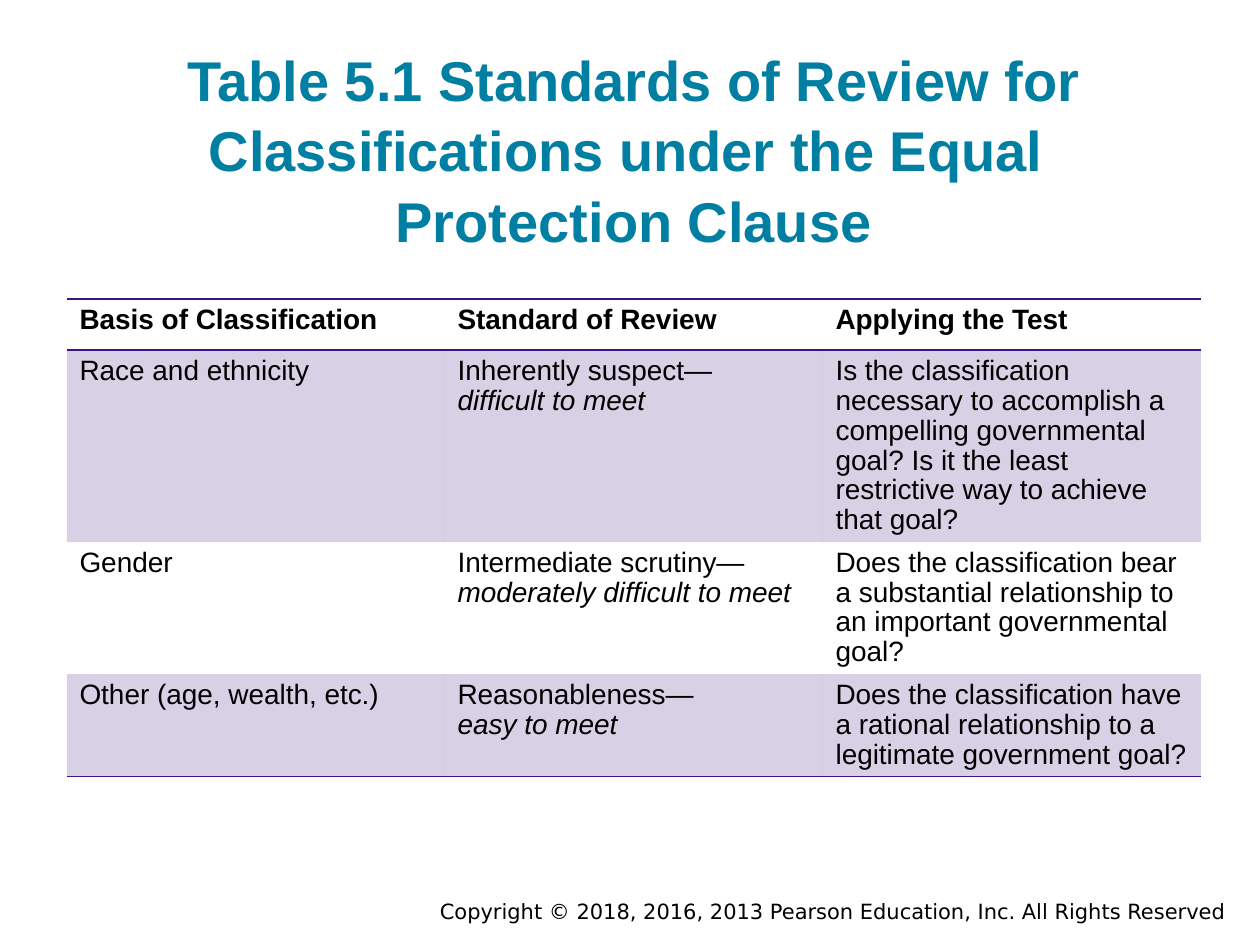
from lxml.etree import SubElement
from pptx import Presentation
from pptx.dml.color import RGBColor
from pptx.enum.text import MSO_ANCHOR, PP_ALIGN
from pptx.oxml import parse_xml
from pptx.oxml.ns import nsdecls, qn
from pptx.util import Cm, Pt

# Content
TITLE = "Table 5.1 Standards of Review for Classifications under the Equal \vProtection Clause"
COPYRIGHT = "Copyright © 2018, 2016, 2013 Pearson Education, Inc. All Rights Reserved"
HEADERS = ["Basis of Classification", "Standard of Review", "Applying the Test"]
# basis, standard, how hard it is to meet, test
STANDARDS = [
    ("Race and ethnicity", "Inherently suspect—", "difficult to meet",
     "Is the classification necessary to accomplish a compelling governmental goal? "
     "Is it the least restrictive way to achieve that goal?"),
    ("Gender", "Intermediate scrutiny—", "moderately difficult to meet",
     "Does the classification bear a substantial relationship to an important "
     "governmental goal?"),
    ("Other (age, wealth, etc.)", "Reasonableness—", "easy to meet",
     "Does the classification have a rational relationship to a legitimate "
     "government goal?"),
]

TEAL = RGBColor(0x00, 0x7F, 0xA3)
PURPLE = RGBColor(0x3C, 0x15, 0x81)
BLACK = RGBColor(0, 0, 0)
NO_STYLE = "{2D5ABB26-0587-4C30-8999-92F81FD0307C}"
LEFT, WIDTH = Cm(1.35), Cm(22.86)
ROW_H = Cm(1.03)


def write(p, text, size=16, font="Arial", color=BLACK, bold=False, italic=False,
          align=PP_ALIGN.LEFT, spacing=None):
    p.text = text
    p.alignment = align
    p.line_spacing = spacing
    for r in p.runs:
        f = r.font
        f.size, f.name, f.bold, f.italic = Pt(size), font, bold, italic
        f.color.rgb = color


def tint(cell):
    """Fill a cell with purple at 20% opacity."""
    cell.fill.solid()
    cell.fill.fore_color.rgb = PURPLE
    color = cell.fill._xPr.find(qn("a:solidFill"))[0]
    SubElement(color, qn("a:alpha")).set("val", "20000")


def add_rules(cell, *sides):
    """Draw 1 pt rules; sides are given in schema order (lnT, lnB)."""
    tcPr = cell._tc.get_or_add_tcPr()
    for i, side in enumerate(sides):
        tcPr.insert(i, parse_xml(
            f'<a:{side} {nsdecls("a")} w="12700"><a:solidFill>'
            f'<a:srgbClr val="{PURPLE}"/></a:solidFill></a:{side}>'))


prs = Presentation()
prs.slide_width, prs.slide_height = Cm(25.4), Cm(19.05)
s = prs.slides.add_slide(prs.slide_layouts[5])

# Title
title = s.shapes.title
title.left, title.top, title.width, title.height = LEFT, Cm(0.89), WIDTH, Cm(4.47)
tf = title.text_frame
tf.word_wrap = True
tf.vertical_anchor = MSO_ANCHOR.BOTTOM
tf.margin_left = tf.margin_right = tf.margin_top = tf.margin_bottom = Cm(0.25)
write(tf.paragraphs[0], TITLE, size=32, color=TEAL, bold=True,
      align=PP_ALIGN.CENTER, spacing=1.05)

# Table: rows grow to fit their text
rows = [[[h] for h in HEADERS]]
rows += [[[basis], [standard, burden], [test]]
         for basis, standard, burden, test in STANDARDS]
table = s.shapes.add_table(len(rows), len(HEADERS), LEFT, Cm(6.03), WIDTH,
                           ROW_H * len(rows)).table
table._tbl.tblPr.find(qn("a:tableStyleId")).text = NO_STYLE
for i, row in enumerate(rows):
    for j, lines in enumerate(row):
        cell = table.cell(i, j)
        tf = cell.text_frame
        for n, line in enumerate(lines):
            p = tf.add_paragraph() if n else tf.paragraphs[0]
            write(p, line, bold=i == 0, italic=n == 1, spacing=0.96)
        if i % 2:
            tint(cell)
        else:
            cell.fill.background()
        if i == 0:
            add_rules(cell, "lnT", "lnB")
        elif i == len(rows) - 1:
            add_rules(cell, "lnB")

# Copyright line
tf = s.shapes.add_textbox(Cm(5.08), Cm(17.98), Cm(19.89), Cm(0.76)).text_frame
tf.word_wrap = True
write(tf.paragraphs[0], COPYRIGHT, size=12, font="DejaVu Sans", align=PP_ALIGN.RIGHT)

prs.save("out.pptx")
